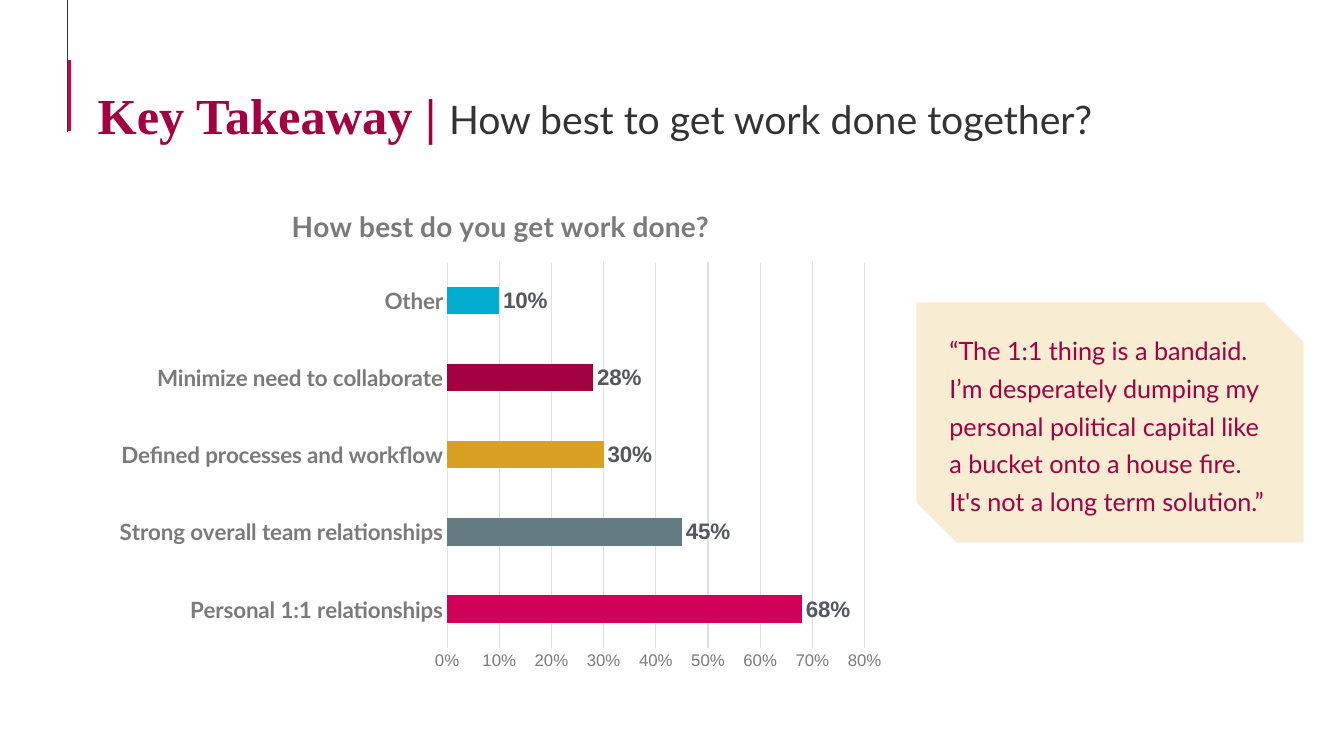
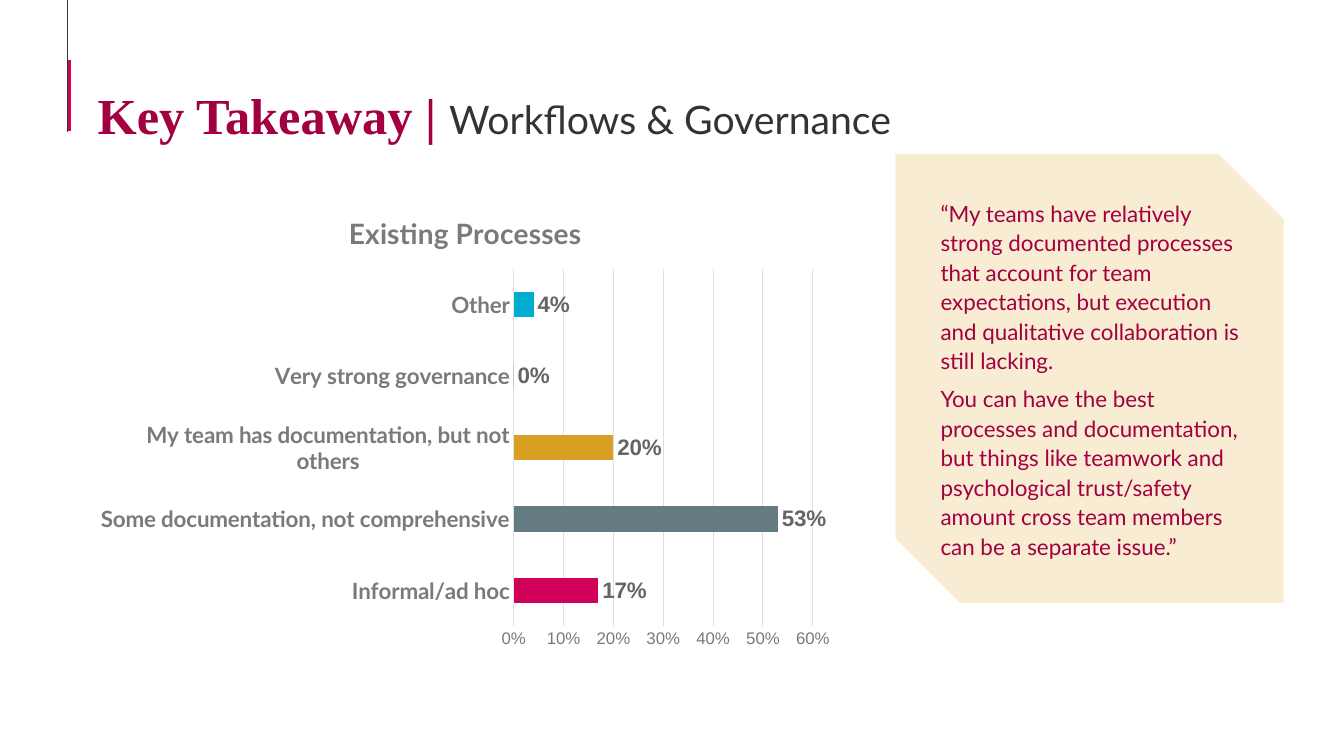
from lxml.etree import SubElement
from pptx import Presentation
from pptx.chart.data import CategoryChartData
from pptx.dml.color import RGBColor
from pptx.enum.chart import XL_CHART_TYPE, XL_LABEL_POSITION, XL_TICK_MARK
from pptx.enum.shapes import MSO_CONNECTOR, MSO_SHAPE
from pptx.enum.text import MSO_ANCHOR, PP_ALIGN
from pptx.oxml.ns import qn
from pptx.util import Inches, Pt

PINK, WINE, CREAM = "D10058", "A30041", "F8ECD3"
DARK, GREY, GRID = "333333", "7A7A7A", "E0E0E0"
BAR_COLORS = [PINK, "637B81", "D9A024", WINE, "00ADCE"]
SERIF, SANS, CHART_FONT = "Times New Roman", "Lato", "Arial"


def rgb(color):
    """Turn a hex string into a colour."""
    return RGBColor.from_string(color)


def set_font(font, size, color, name=SANS, bold=False):
    """Format a font."""
    font.size, font.name, font.bold = Pt(size), name, bold
    font.color.rgb = rgb(color)


def add_text(p, text, **fmt):
    """Append a formatted run to a paragraph."""
    r = p.add_run()
    r.text = text
    set_font(r.font, **fmt)


def add_line(slide, x, top, bottom, color, width):
    """Draw a vertical line without a shadow."""
    line = slide.shapes.add_connector(
        MSO_CONNECTOR.STRAIGHT, Inches(x), Inches(top), Inches(x), Inches(bottom))
    line.line.color.rgb = rgb(color)
    line.line.width = Pt(width)
    SubElement(line._element.spPr, qn("a:effectLst"))


def add_title(slide, topic):
    """Add the rules at the left and the two-part title."""
    add_line(slide, 0.69, 0.6, 1.3, PINK, 2)
    add_line(slide, 0.67, 0, 1.31, DARK, 0.75)
    box = slide.shapes.add_textbox(Inches(0.87), Inches(0.79), Inches(12.4), Inches(0.64))
    tf = box.text_frame
    tf.word_wrap = True
    p = tf.paragraphs[0]
    add_text(p, "Key Takeaway | ", size=36, color=WINE, name=SERIF, bold=True)
    add_text(p, topic, size=28, color=DARK)


def style_axes(chart, maximum):
    """Format the category axis, value axis and gridlines."""
    cat, val = chart.category_axis, chart.value_axis
    for axis in (cat, val):
        axis.major_tick_mark = axis.minor_tick_mark = XL_TICK_MARK.NONE
    cat.format.line.color.rgb = rgb(GRID)
    cat.format.line.width = Pt(0.75)
    set_font(cat.tick_labels.font, 16, GREY, bold=True)
    val.minimum_scale, val.maximum_scale, val.major_unit = 0, maximum, 0.1
    val.format.line.fill.background()
    val.major_gridlines.format.line.color.rgb = rgb(GRID)
    val.major_gridlines.format.line.width = Pt(0.75)
    val.tick_labels.number_format = "0%"
    val.tick_labels.number_format_is_linked = False
    set_font(val.tick_labels.font, 12, GREY, name=CHART_FONT)


def add_bar_chart(slide, box, title, data, maximum, label_color):
    """Add a titled bar chart with one colour per bar."""
    chart_data = CategoryChartData(number_format="0%")
    chart_data.categories = list(data)
    chart_data.add_series(title, list(data.values()))
    chart = slide.shapes.add_chart(
        XL_CHART_TYPE.BAR_CLUSTERED, *map(Inches, box), chart_data).chart
    set_font(chart.font, 10, DARK, name=CHART_FONT)
    chart.has_legend = False
    chart.has_title = True
    add_text(chart.chart_title.text_frame.paragraphs[0], title,
             size=20, color=GREY, bold=True)
    chart.chart_title.include_in_layout = False
    style_axes(chart, maximum)

    plot = chart.plots[0]
    plot.gap_width = 182
    plot.vary_by_categories = False
    series = plot.series[0]
    for i, color in enumerate(BAR_COLORS):
        fill = series.points[i].format.fill
        fill.solid()
        fill.fore_color.rgb = rgb(color)
    labels = series.data_labels
    labels.show_value = True
    labels.position = XL_LABEL_POSITION.OUTSIDE_END
    labels.number_format = "0%"
    labels.number_format_is_linked = False
    set_font(labels.font, 16, label_color, name=CHART_FONT, bold=True)


def add_quote(slide, box, paragraphs, size, spacing, before=0):
    """Add a snipped panel that holds a quotation."""
    sp = slide.shapes.add_shape(MSO_SHAPE.SNIP_2_DIAG_RECTANGLE, *map(Inches, box))
    sp.shadow.inherit = False
    sp.fill.solid()
    sp.fill.fore_color.rgb = rgb(CREAM)
    sp.line.fill.background()
    tf = sp.text_frame
    tf.word_wrap = True
    tf.vertical_anchor = MSO_ANCHOR.MIDDLE
    for i, text in enumerate(paragraphs):
        p = tf.add_paragraph() if i else tf.paragraphs[0]
        p.alignment = PP_ALIGN.LEFT
        p.line_spacing = spacing
        p.space_before = Pt(before)
        p._p.get_or_add_pPr().set("marL", str(Inches(0.03)))
        add_text(p, text, size=size, color=WINE)


def add_slide(prs, topic):
    """Add a blank slide with the shared title."""
    s = prs.slides.add_slide(prs.slide_layouts[6])
    add_title(s, topic)
    return s


def main():
    """Build and save the presentation."""
    prs = Presentation()
    prs.slide_width, prs.slide_height = Inches(13.33), Inches(7.5)

    s = add_slide(prs, "How best to get work done together?")
    add_bar_chart(s, (1.03, 1.84, 7.87, 4.9), "How best do you get work done?", {
        "Personal 1:1 relationships": 0.68,
        "Strong overall team relationships": 0.45,
        "Defined processes and workflow": 0.3,
        "Minimize need to collaborate": 0.28,
        "Other": 0.1,
    }, maximum=0.8, label_color="54575C")
    add_quote(s, (9.09, 3, 3.84, 2.38), [
        "“The 1:1 thing is a bandaid. I’m desperately dumping my personal political "
        "capital like a bucket onto a house fire. It's not a long term solution.”",
    ], size=18, spacing=1.25)

    s = add_slide(prs, "Workflows & Governance")
    add_bar_chart(s, (0.85, 1.92, 7.53, 4.6), "Existing Processes", {
        "Informal/ad hoc": 0.17,
        "Some documentation, not comprehensive": 0.53,
        "My team has documentation, but not others": 0.2,
        "Very strong governance": 0,
        "Other": 0.04,
    }, maximum=0.6, label_color="666666")
    add_quote(s, (8.88, 1.53, 3.85, 4.45), [
        "“My teams have relatively strong documented processes that account for team "
        "expectations, but execution and qualitative collaboration is still lacking.",
        "You can have the best processes and documentation, but things like teamwork and "
        "psychological trust/safety amount cross team members can be a separate issue.”",
    ], size=16, spacing=1.1, before=6)

    prs.save("out.pptx")


if __name__ == "__main__":
    main()
